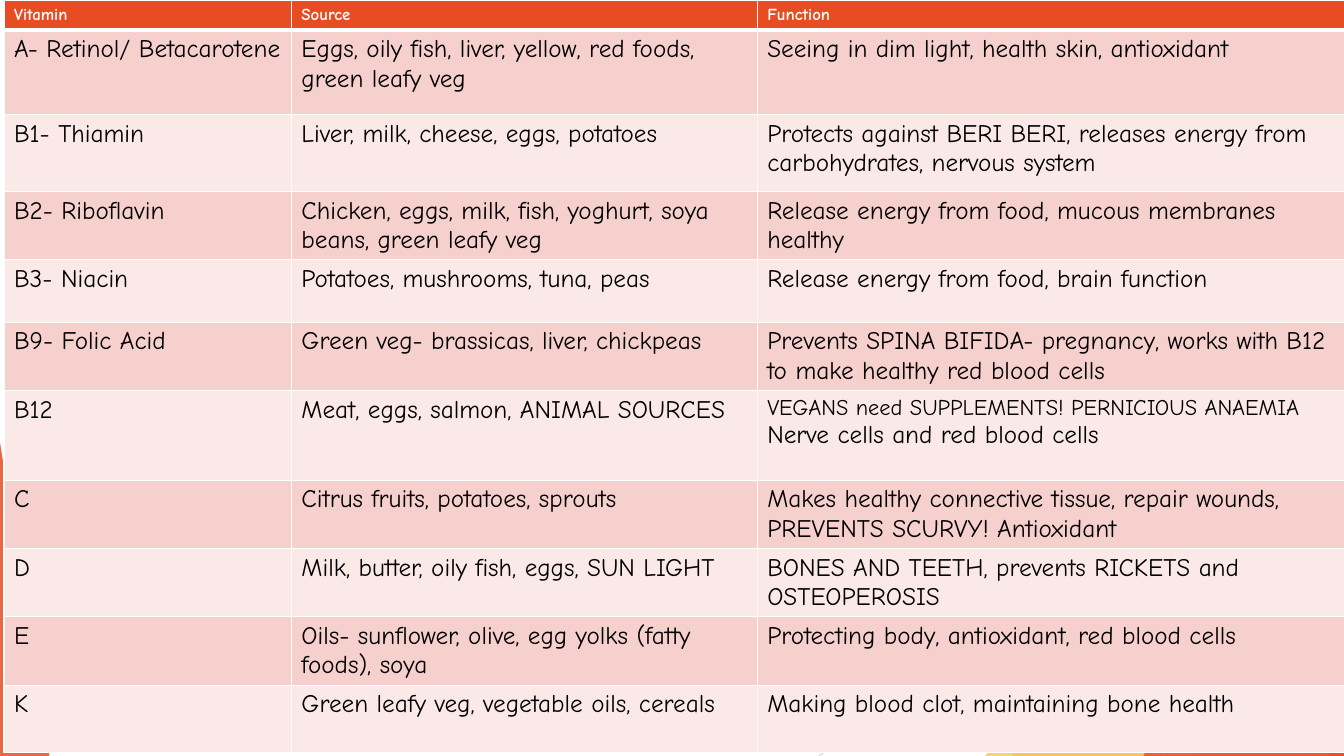
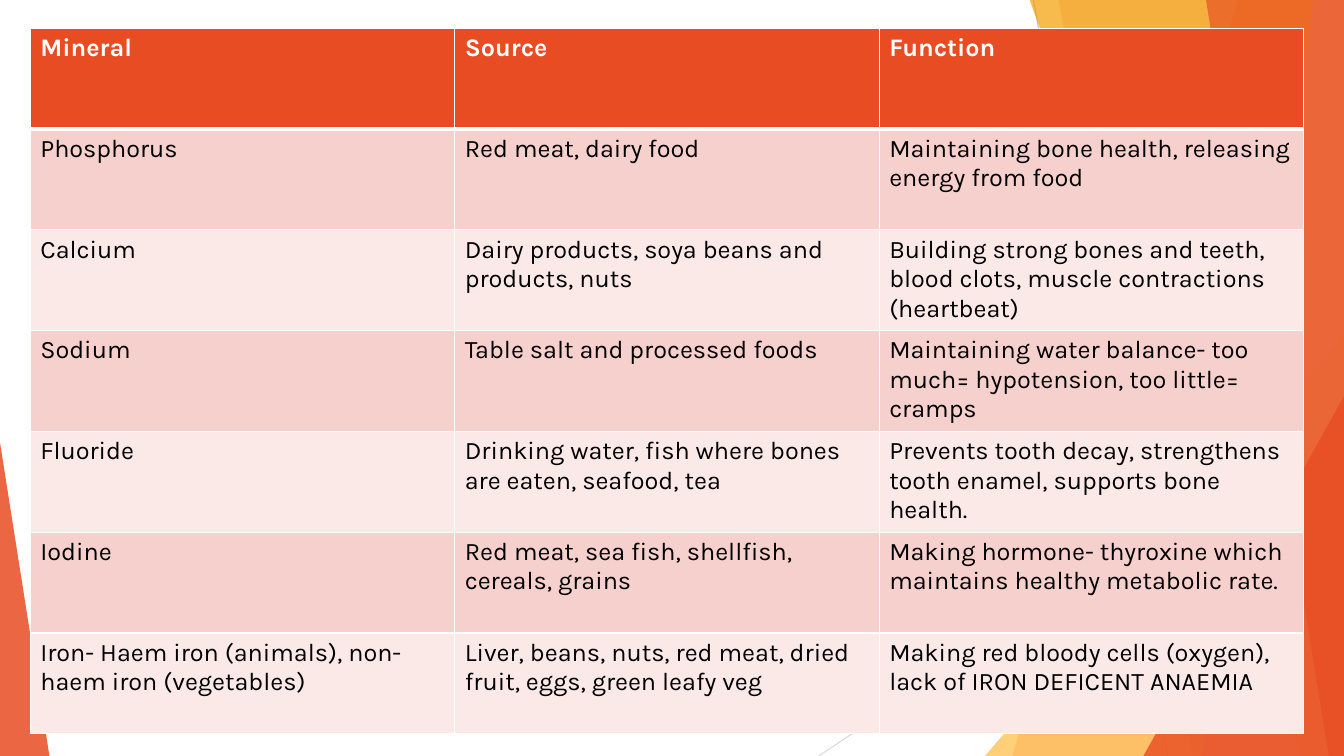
from lxml import etree
from pptx import Presentation
from pptx.dml.color import RGBColor
from pptx.enum import shapes as kinds
from pptx.oxml import ns
from pptx.util import Inches, Pt

WHITE = RGBColor(0xFF, 0xFF, 0xFF)
BLACK = RGBColor(0x00, 0x00, 0x00)
RED = RGBColor(0xE8, 0x4C, 0x22)
SALMON = RGBColor(0xF1, 0x94, 0x7A)
AMBER = RGBColor(0xF4, 0x9D, 0x00)
YELLOW = RGBColor(0xFF, 0xBD, 0x47)
GREY = RGBColor(0xBF, 0xBF, 0xBF)
SILVER = RGBColor(0xD9, 0xD9, 0xD9)
BANDS = RGBColor(0xF6, 0xD0, 0xCD), RGBColor(0xFB, 0xE9, 0xE8)

WIDTH, HEIGHT = 13.33, 7.5

VITAMINS = [
    ("Vitamin", "Source", "Function"),
    ("A- Retinol/ Betacarotene",
     "Eggs, oily fish, liver, yellow, red foods, green leafy veg",
     "Seeing in dim light, health skin, antioxidant"),
    ("B1- Thiamin", "Liver, milk, cheese, eggs, potatoes",
     "Protects against BERI BERI, releases energy from carbohydrates, nervous system"),
    ("B2- Riboflavin",
     "Chicken, eggs, milk, fish, yoghurt, soya beans, green leafy veg",
     "Release energy from food, mucous membranes healthy"),
    ("B3- Niacin", "Potatoes, mushrooms, tuna, peas",
     "Release energy from food, brain function"),
    ("B9- Folic Acid", "Green veg- brassicas, liver, chickpeas",
     "Prevents SPINA BIFIDA- pregnancy, works with B12 to make healthy red blood cells"),
    ("B12", "Meat, eggs, salmon, ANIMAL SOURCES",
     "VEGANS need SUPPLEMENTS! PERNICIOUS ANAEMIA\nNerve cells and red blood cells"),
    ("C", "Citrus fruits, potatoes, sprouts",
     "Makes healthy connective tissue, repair wounds, PREVENTS SCURVY! Antioxidant"),
    ("D", "Milk, butter, oily fish, eggs, SUN LIGHT",
     "BONES AND TEETH, prevents RICKETS and OSTEOPEROSIS"),
    ("E", "Oils- sunflower, olive, egg yolks (fatty foods), soya",
     "Protecting body, antioxidant, red blood cells"),
    ("K", "Green leafy veg, vegetable oils, cereals",
     "Making blood clot, maintaining bone health"),
]

MINERALS = [
    ("Mineral", "Source", "Function"),
    ("Phosphorus", "Red meat, dairy food",
     "Maintaining bone health, releasing energy from food"),
    ("Calcium", "Dairy products, soya beans and products, nuts",
     "Building strong bones and teeth, blood clots, muscle contractions (heartbeat)"),
    ("Sodium", "Table salt and processed foods",
     "Maintaining water balance- too much= hypotension, too little= cramps"),
    ("Fluoride", "Drinking water, fish where bones are eaten, seafood, tea",
     "Prevents tooth decay, strengthens tooth enamel, supports bone health."),
    ("Iodine", "Red meat, sea fish, shellfish, cereals, grains",
     "Making hormone- thyroxine which maintains healthy metabolic rate."),
    ("Iron- Haem iron (animals), non-haem iron (vegetables)",
     "Liver, beans, nuts, red meat, dried fruit, eggs, green leafy veg",
     "Making red bloody cells (oxygen), lack of IRON DEFICENT ANAEMIA"),
]


def paint(shape, color, alpha):
    """Fill a shape with a colour at an opacity in percent, without a line."""
    shape.shadow.inherit = False
    shape.line.fill.background()
    shape.fill.solid()
    shape.fill.fore_color.rgb = color
    tone = shape.fill._xPr.find(".//" + ns.qn("a:srgbClr"))
    etree.SubElement(tone, ns.qn("a:alpha"), val=str(alpha * 1000))


def add_line(slide, start, end, color):
    line = slide.shapes.add_connector(
        kinds.MSO_CONNECTOR.STRAIGHT, *map(Inches, start + end))
    line.line.color.rgb = color
    line.line.width = Pt(0.75)
    etree.SubElement(line._element.spPr, ns.qn("a:effectLst"))


def add_shard(slide, top, foot, color, alpha):
    """Draw a full-height panel from a slanted left edge to the slide's right."""
    pen = slide.shapes.build_freeform(Inches(top), Inches(-0.01))
    corners = [(WIDTH, -0.01), (WIDTH, HEIGHT), (foot, HEIGHT)]
    pen.add_line_segments([(Inches(x), Inches(y)) for x, y in corners])
    paint(pen.convert_to_shape(), color, alpha)


def add_peak(slide, left, top, width, apex, color, alpha):
    """Draw a triangle that stands on the bottom edge of the slide."""
    peak = slide.shapes.add_shape(
        kinds.MSO_SHAPE.ISOSCELES_TRIANGLE,
        *map(Inches, (left, top, width, HEIGHT - top)))
    peak.adjustments[0] = apex
    paint(peak, color, alpha)


def add_decor(slide):
    add_line(slide, (10.25, 0), (11.58, HEIGHT), GREY)
    add_line(slide, (WIDTH, 4.03), (8.12, HEIGHT), SILVER)
    add_shard(slide, 12.28, 10.04, RED, 30)
    add_shard(slide, 10.5, 11.83, RED, 20)
    add_peak(slide, 9.77, 3.33, 3.56, 1, YELLOW, 72)
    add_shard(slide, 10.21, 12.91, AMBER, 70)
    add_shard(slide, 13.03, 11.92, SALMON, 70)
    add_shard(slide, 11.96, 13.18, RED, 65)
    add_peak(slide, 11.34, 3.93, 1.99, 1, RED, 80)
    add_peak(slide, 0, 4.39, 0.49, 0, RED, 85)


def write(frame, text, *, font, size=18, color=BLACK, bold=False):
    frame.text = text
    for para in frame.paragraphs:
        for run in para.runs:
            run.font.name = font
            run.font.size = Pt(size)
            run.font.bold = bold
            run.font.color.rgb = color


def add_edges(cell, top=1, bottom=1):
    """Give a cell white borders, with widths in points."""
    props = cell._tc.get_or_add_tcPr()
    for side, width in zip("LRTB", (1, 1, top, bottom)):
        edge = etree.SubElement(props, ns.qn("a:ln" + side), w=str(Pt(width)))
        fill = etree.SubElement(edge, ns.qn("a:solidFill"))
        etree.SubElement(fill, ns.qn("a:srgbClr"), val=str(WHITE))


def add_grid(slide, rows, left, top, widths, heights, font, head):
    """Add a banded table; head is the text size of its first row."""
    box = map(Inches, (left, top, sum(widths), sum(heights)))
    table = slide.shapes.add_table(len(rows), len(widths), *box).table
    for col, width in zip(table.columns, widths):
        col.width = Inches(width)
    for i, (row, height, texts) in enumerate(zip(table.rows, heights, rows)):
        row.height = Inches(height)
        for cell, text in zip(row.cells, texts):
            add_edges(cell, top=3 if i == 1 else 1, bottom=1 if i else 3)
            cell.fill.solid()
            cell.fill.fore_color.rgb = BANDS[(i - 1) % 2] if i else RED
            if i:
                write(cell.text_frame, text, font=font)
            else:
                write(cell.text_frame, text, font=font, size=head,
                      color=WHITE, bold=True)
    return table


def add_page(deck):
    slide = deck.slides.add_slide(deck.slide_layouts[6])
    add_decor(slide)
    return slide


def main():
    deck = Presentation()
    deck.slide_width, deck.slide_height = Inches(WIDTH), Inches(HEIGHT)

    heights = [0.3, 0.84, 0.76, 0.67, 0.62, 0.67, 0.89] + [0.67] * 4
    table = add_grid(add_page(deck), VITAMINS, 0.04, 0, [2.85, 4.62, 5.83],
                     heights, "Comic Neue", head=12)
    vegans = table.cell(6, 2).text_frame.paragraphs[0]
    vegans.runs[0].font.size = Pt(16)

    add_grid(add_page(deck), MINERALS, 0.3, 0.28, [4.21] * 3,
             [1] * len(MINERALS), "Karla", head=18)

    deck.save("out.pptx")


if __name__ == "__main__":
    main()
